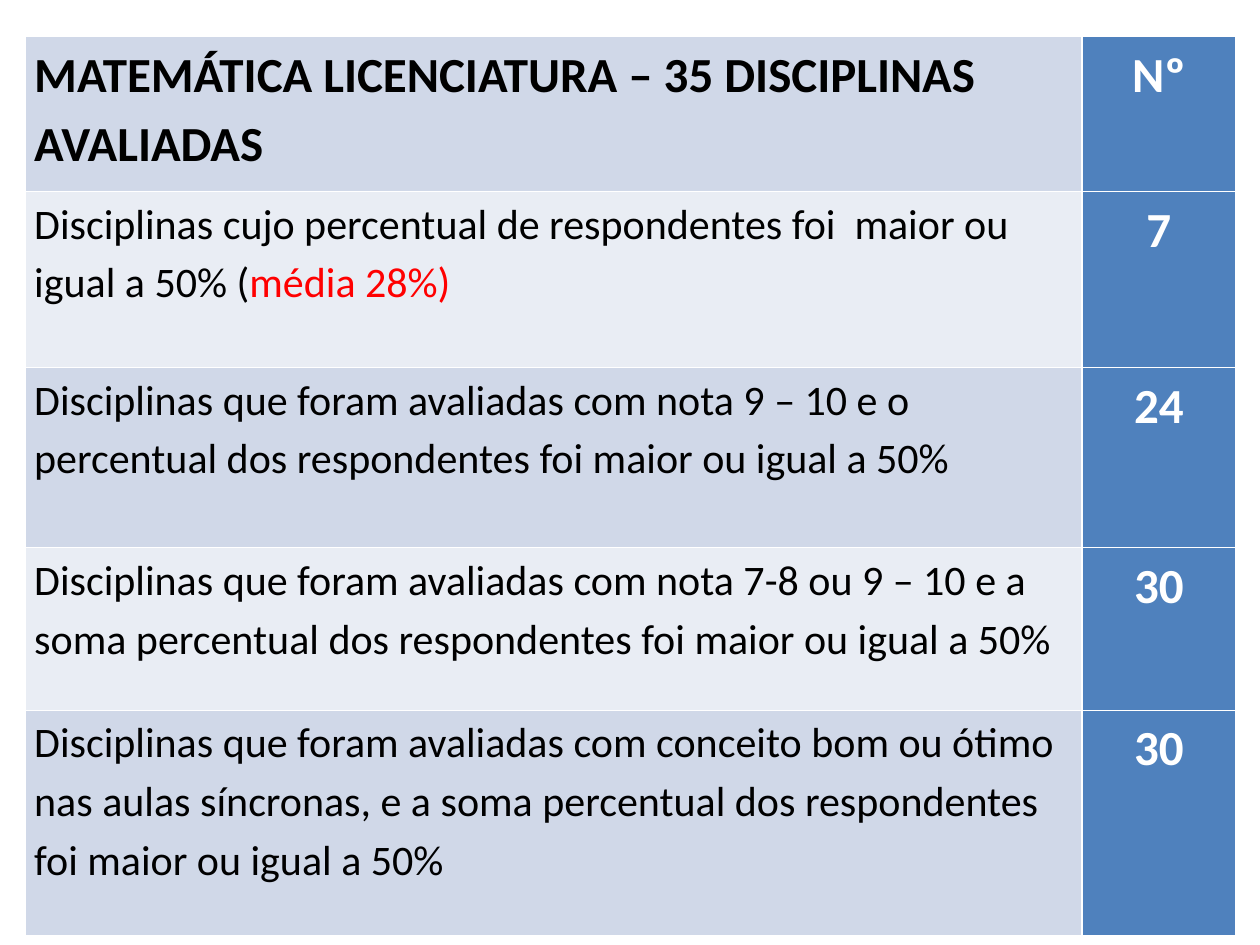
from lxml import etree
from pptx import Presentation
from pptx.dml.color import RGBColor
from pptx.enum.text import PP_ALIGN
from pptx.oxml.ns import qn
from pptx.util import Cm, Pt

LEFT, CENTER = PP_ALIGN.LEFT, PP_ALIGN.CENTER

COLORS = {
    "text": "000000",
    "highlight": "FF0000",
    "white": "FFFFFF",
    "count": "4F81BD",
    "band_dark": "D0D8E8",
    "band_light": "E9EDF4",
}

COLUMN_WIDTHS = (21.31, 3.1)
ROW_HEIGHTS = (3.12, 3.55, 3.63, 3.28, 4.55)
EVALUATIONS = [
    ("MATEMÁTICA LICENCIATURA – 35 DISCIPLINAS AVALIADAS", "", "Nº"),
    ("Disciplinas cujo percentual de respondentes foi  maior ou igual a 50% (",
     "média 28%)", "7"),
    ("Disciplinas que foram avaliadas com nota 9 – 10 e o percentual dos "
     "respondentes foi maior ou igual a 50%", "", "24"),
    ("Disciplinas que foram avaliadas com nota 7-8 ou 9 – 10 e a soma "
     "percentual dos respondentes foi maior ou igual a 50%", "", "30"),
    ("Disciplinas que foram avaliadas com conceito bom ou ótimo nas aulas "
     "síncronas, e a soma percentual dos respondentes foi maior ou igual a 50%",
     "", "30"),
]


class SlideBuilder:
    """Holds the table style and the current slide."""

    font = "Calibri"
    line_spacing = 1.15
    side_margin = Cm(0.19)
    border_width = Pt(1)

    def __init__(self, slide):
        self.slide = slide

    def table(self, left, top, widths, heights):
        frame = self.slide.shapes.add_table(
            len(heights), len(widths), Cm(left), Cm(top),
            Cm(sum(widths)), Cm(sum(heights)))
        for column, width in zip(frame.table.columns, widths):
            column.width = Cm(width)
        for row, height in zip(frame.table.rows, heights):
            row.height = Cm(height)
        return frame.table

    def borders(self, cell):
        properties = cell._tc.get_or_add_tcPr()
        for side in ("lnL", "lnR", "lnT", "lnB"):
            line = etree.SubElement(properties, qn(f"a:{side}"), w=str(self.border_width))
            solid = etree.SubElement(line, qn("a:solidFill"))
            etree.SubElement(solid, qn("a:srgbClr"), val=COLORS["white"])

    def cell(self, cell, segments, fill, size, bold, align=LEFT):
        self.borders(cell)
        cell.fill.solid()
        cell.fill.fore_color.rgb = RGBColor.from_string(COLORS[fill])
        cell.margin_left = cell.margin_right = self.side_margin
        cell.margin_top = cell.margin_bottom = 0
        paragraph = cell.text_frame.paragraphs[0]
        paragraph.alignment = align
        paragraph.line_spacing = self.line_spacing
        for text, color in segments:
            run = paragraph.add_run()
            run.text = text
            run.font.name = self.font
            run.font.size = Pt(size)
            run.font.bold = bold
            run.font.color.rgb = RGBColor.from_string(COLORS[color])


def main():
    presentation = Presentation()
    presentation.slide_width, presentation.slide_height = Cm(25.4), Cm(19.05)
    builder = SlideBuilder(presentation.slides.add_slide(presentation.slide_layouts[6]))

    results = builder.table(0.5, 0.74, COLUMN_WIDTHS, ROW_HEIGHTS)
    for index, (criterion, average, count) in enumerate(EVALUATIONS):
        is_header = index == 0
        segments = [(criterion, "text")]
        if average:
            segments.append((average, "highlight"))
        band = "band_light" if index % 2 else "band_dark"
        builder.cell(results.cell(index, 0), segments, band,
                     28 if is_header else 24, is_header)
        builder.cell(results.cell(index, 1), [(count, "white")], "count",
                     28, True, CENTER)

    presentation.save("out.pptx")


if __name__ == "__main__":
    main()
